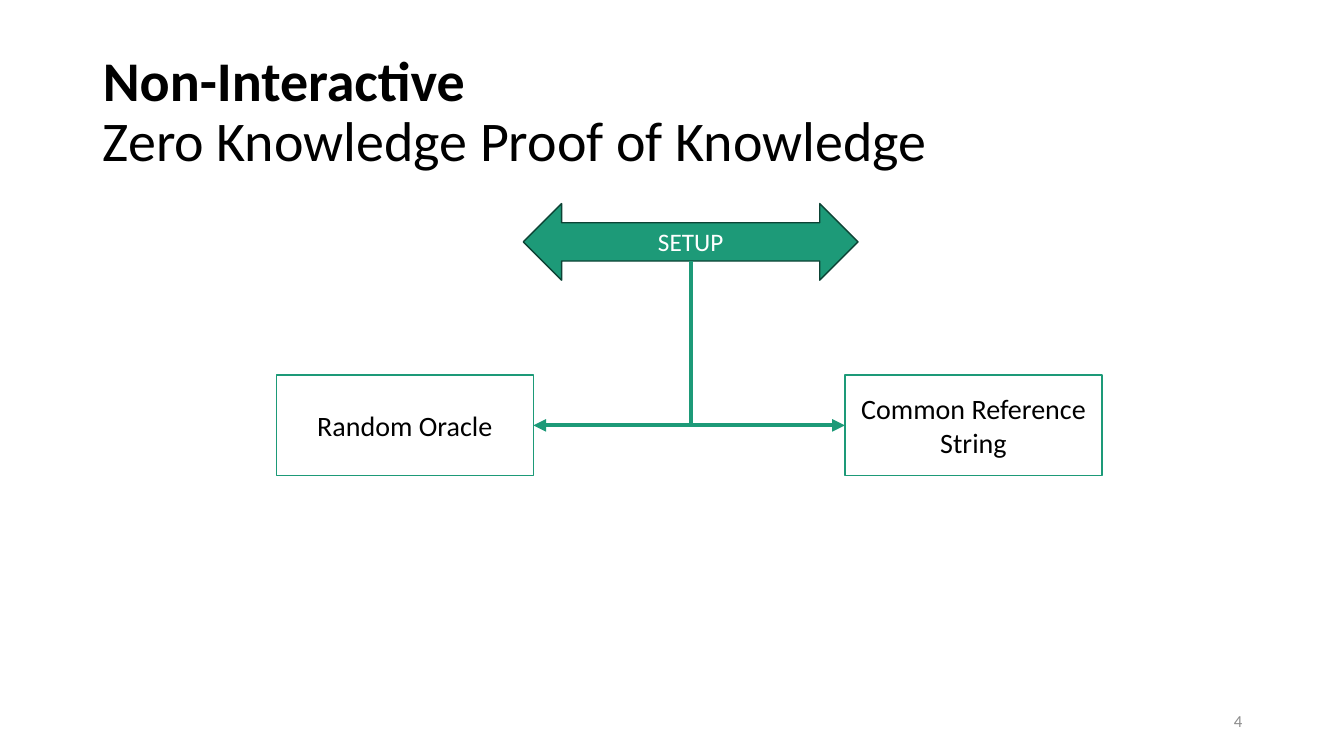
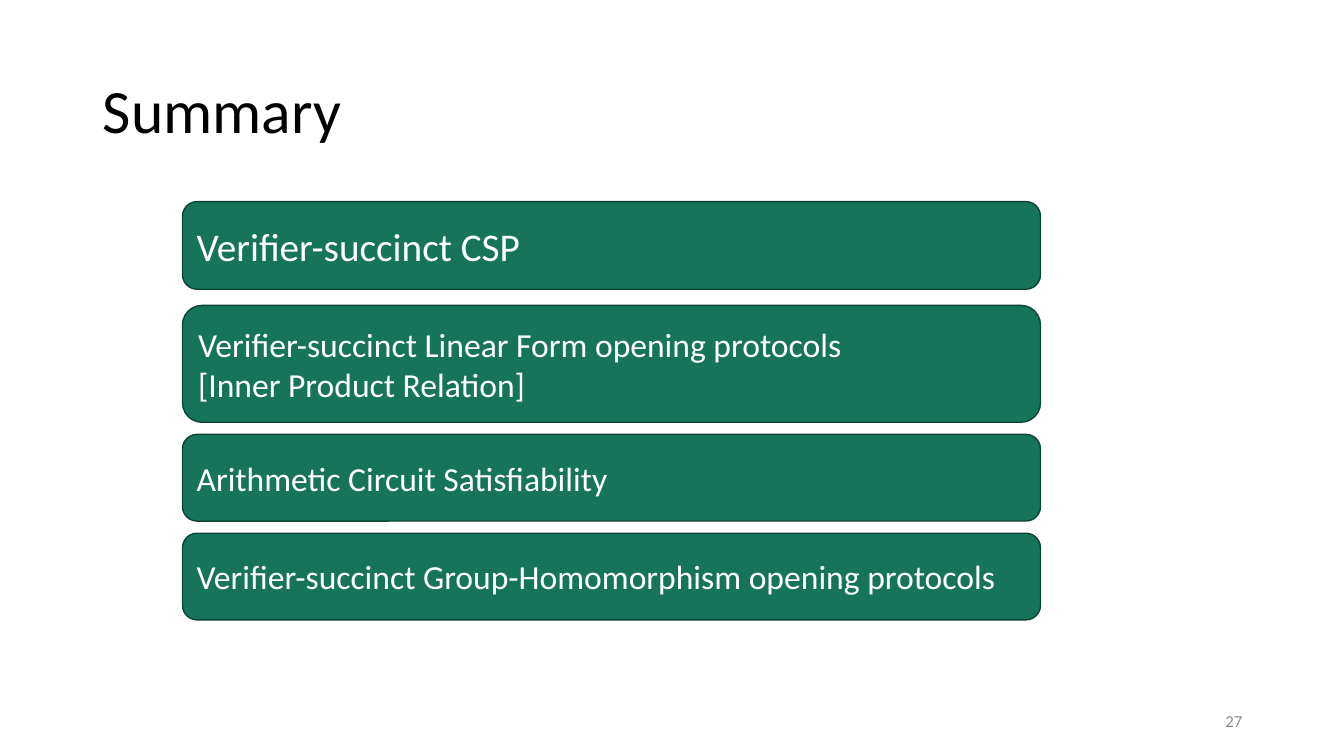
from lxml.etree import SubElement
from pptx import Presentation
from pptx.dml.color import RGBColor
from pptx.enum.shapes import MSO_CONNECTOR, MSO_SHAPE
from pptx.enum.text import MSO_ANCHOR, MSO_AUTO_SIZE, PP_ALIGN
from pptx.oxml.ns import qn
from pptx.util import Inches, Pt

WIDTH, HEIGHT = 13.33, 7.5
FONT = "Calibri"
COLORS = {
    "ink": "000000", "paper": "FFFFFF", "muted": "8C8C8C",
    "green": "1D9A78", "deep": "16745A", "edge": "0D4335",
}
TITLE_AREA = (0.92, 0.4, 11.5, 1.45)
NUMBER_AREA = (9.42, 6.95, 3, 0.4)

SETUP_TITLE = ["Non-Interactive", "Zero Knowledge Proof of Knowledge"]
SETUP_LABEL = "SETUP"
SETUP_ARROW = (5.19, 2.02, 3.32, 0.76)
RIGHT_SITE, LEFT_SITE = 3, 1
# Label, connection site that faces the middle
SETUP_OPTIONS = [("Random Oracle", RIGHT_SITE), ("Common Reference String", LEFT_SITE)]
OPTION_LEFT, OPTION_PITCH = 2.74, 5.64
OPTION_TOP, OPTION_WIDTH, OPTION_HEIGHT = 3.72, 2.55, 1

SUMMARY_TITLE = ["Summary"]
SUMMARY_LEFT, SUMMARY_TOP, SUMMARY_WIDTH = 1.81, 2, 8.51
# Lines, text size, bar height, gap below
SUMMARY_BARS = [
    (["Verifier-succinct CSP"], 28, 0.87, 0.16),
    (["Verifier-succinct Linear Form opening protocols",
      "[Inner Product Relation]"], 24, 1.16, 0.12),
    (["Arithmetic Circuit Satisfiability"], 24, 0.86, 0.12),
    (["Verifier-succinct Group-Homomorphism opening protocols"], 24, 0.86, 0),
]


def color(name):
    return RGBColor.from_string(COLORS[name])


def write(box, lines, size, ink="ink", align=PP_ALIGN.LEFT, spacing=1.0, bold_lines=()):
    """Fill a shape with one paragraph per line, centred vertically."""
    frame = box.text_frame
    frame.word_wrap = True
    frame.auto_size = MSO_AUTO_SIZE.NONE
    frame.vertical_anchor = MSO_ANCHOR.MIDDLE
    for index, line in enumerate(lines):
        para = frame.paragraphs[0] if index == 0 else frame.add_paragraph()
        para.alignment = align
        para.line_spacing = spacing
        span = para.add_run()
        span.text = line
        span.font.name = FONT
        span.font.size = Pt(size)
        span.font.bold = index in bold_lines
        span.font.color.rgb = color(ink)


def add_page(deck, title_lines, number, size, bold_lines=()):
    page = deck.slides.add_slide(deck.slide_layouts[5])
    title = page.shapes.title
    title.left, title.top, title.width, title.height = map(Inches, TITLE_AREA)
    write(title, title_lines, size, spacing=0.9, bold_lines=bold_lines)
    number_box = page.shapes.add_textbox(*map(Inches, NUMBER_AREA))
    write(number_box, [str(number)], 12, ink="muted", align=PP_ALIGN.RIGHT)
    return page


def add_block(page, kind, area, fill, line):
    block = page.shapes.add_shape(kind, *map(Inches, area))
    block.shadow.inherit = False
    block.fill.solid()
    block.fill.fore_color.rgb = color(fill)
    block.line.color.rgb = color(line)
    block.line.width = Pt(1)
    return block


def add_elbow(page, start, target, site):
    """Draw an arrow that runs down from start, then sideways to a site of target."""
    x, y = map(Inches, start)
    elbow = page.shapes.add_connector(MSO_CONNECTOR.ELBOW, x, y, x, y)
    elbow.end_connect(target, site)
    run, drop = elbow.end_x - x, elbow.end_y - y

    # A quarter turn swaps the sides of the frame around its centre.
    elbow.left = int(x + run / 2 - drop / 2)
    elbow.top = int(y + drop / 2 - abs(run) / 2)
    elbow.width, elbow.height = drop, abs(run)
    properties = elbow._element.spPr
    properties.find(qn("a:prstGeom")).set("prst", "bentConnector2")
    frame = properties.find(qn("a:xfrm"))
    for flip in ("flipH", "flipV"):
        frame.attrib.pop(flip, None)
    quarter_turns = 1 if run < 0 else 3
    frame.set("rot", str(quarter_turns * 90 * 60000))
    if run > 0:
        frame.set("flipH", "1")

    elbow.line.color.rgb = color("green")
    elbow.line.width = Pt(3)
    SubElement(elbow.line._get_or_add_ln(), qn("a:tailEnd"), type="triangle")
    SubElement(properties, qn("a:effectLst"))


def build_setup(deck):
    page = add_page(deck, SETUP_TITLE, 4, 40, bold_lines=(0,))
    left, top, width, height = SETUP_ARROW
    arrow = add_block(page, MSO_SHAPE.LEFT_RIGHT_ARROW, SETUP_ARROW, "green", "edge")
    write(arrow, [SETUP_LABEL], 18, ink="paper", align=PP_ALIGN.CENTER)

    shaft_foot = (left + width / 2, top + height * 0.75)
    for index, (label, site) in enumerate(SETUP_OPTIONS):
        area = (OPTION_LEFT + index * OPTION_PITCH, OPTION_TOP, OPTION_WIDTH, OPTION_HEIGHT)
        option = add_block(page, MSO_SHAPE.RECTANGLE, area, "paper", "green")
        write(option, [label], 20, align=PP_ALIGN.CENTER)
        add_elbow(page, shaft_foot, option, site)


def build_summary(deck):
    page = add_page(deck, SUMMARY_TITLE, 27, 44)
    top = SUMMARY_TOP
    for lines, size, height, gap in SUMMARY_BARS:
        area = (SUMMARY_LEFT, top, SUMMARY_WIDTH, height)
        bar = add_block(page, MSO_SHAPE.ROUNDED_RECTANGLE, area, "deep", "edge")
        write(bar, lines, size, ink="paper")
        top += height + gap


def main():
    deck = Presentation()
    deck.slide_width, deck.slide_height = Inches(WIDTH), Inches(HEIGHT)
    build_setup(deck)
    build_summary(deck)
    deck.save("out.pptx")


if __name__ == "__main__":
    main()
